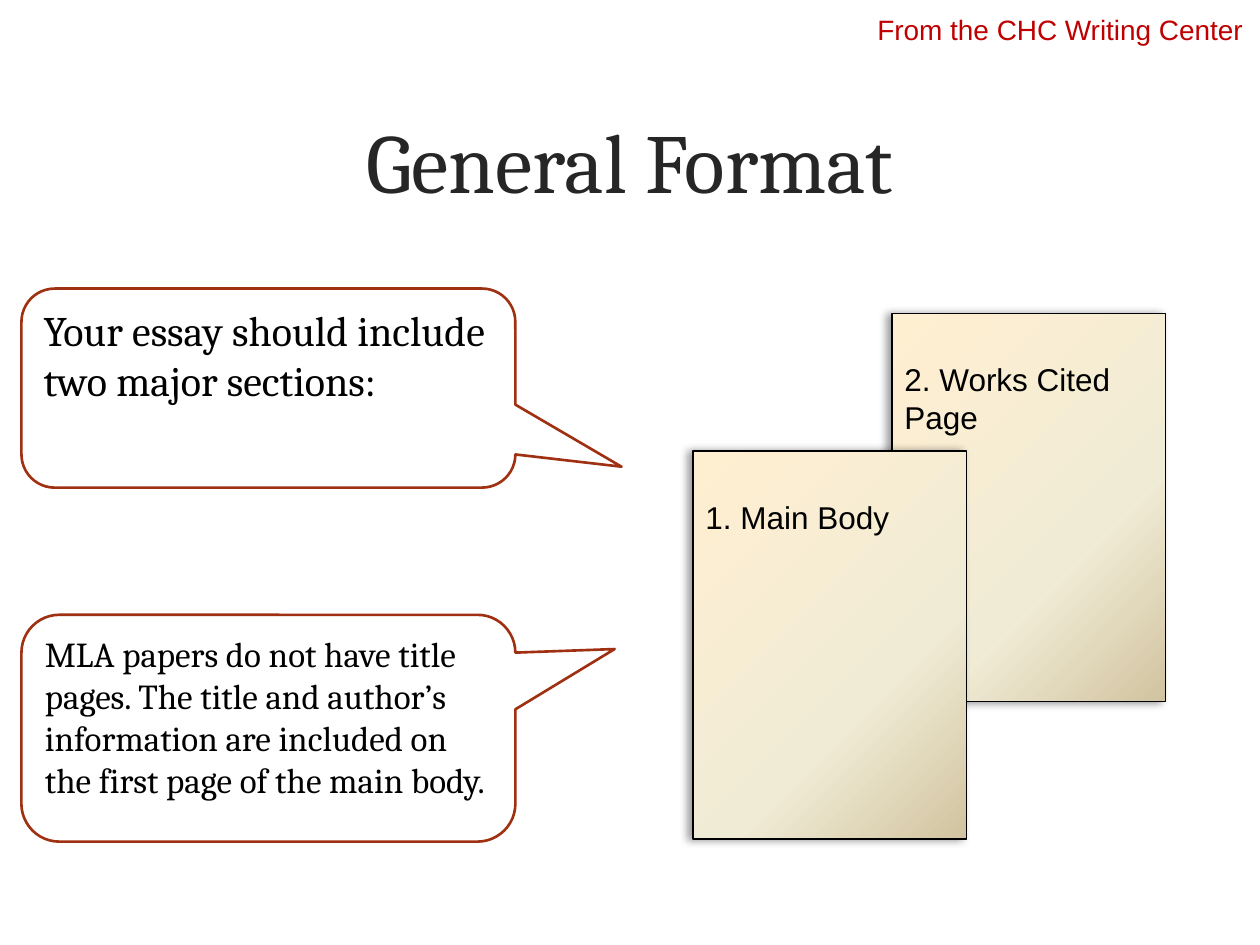
from lxml import etree
from pptx import Presentation
from pptx.dml.color import RGBColor
from pptx.enum.shapes import MSO_SHAPE
from pptx.enum.text import MSO_ANCHOR, PP_ALIGN
from pptx.oxml.ns import qn
from pptx.util import Inches, Pt

CALLOUT = MSO_SHAPE.ROUNDED_RECTANGULAR_CALLOUT
RECTANGLE = MSO_SHAPE.RECTANGLE
TOP, MIDDLE = MSO_ANCHOR.TOP, MSO_ANCHOR.MIDDLE
LEFT, CENTER = PP_ALIGN.LEFT, PP_ALIGN.CENTER

SLIDE_W, SLIDE_H = 10, 7.5
TITLE = "General Format"
SOURCE_NOTE = "From the CHC Writing Center"

# text, text size, top, height, callout tip as shares of the box size
CALLOUTS = [
    ("Your essay should include two major sections:", 24, 2.29, 1.58, (0.715, 0.395)),
    ("MLA papers do not have title pages. The title and author’s information "
     "are included on the first page of the main body.", 20, 4.88, 1.8, (0.701, -0.349)),
]
CALLOUT_LEFT, CALLOUT_W, CORNER = 0.17, 3.92, 0.167

# back sheet first; each later sheet is stepped down and to the left
SHEETS = ["2. Works Cited Page", "1. Main Body"]
SHEET_LEFT, SHEET_TOP, SHEET_W, SHEET_H = 7.08, 2.49, 2.17, 3.08
STEP_X, STEP_Y = -1.58, 1.09
SHEET_TEXT_TOP = 0.37
PAPER_STOPS = [(0, "FFEFD1"), (65, "F0EBD5"), (100, "D1C39F")]

BLACK, WHITE, RUST, RED, CHARCOAL = "000000", "FFFFFF", "9F3011", "C00000", "262626"


def color(value):
    return RGBColor.from_string(value)


def write(shape, text, size, font, ink, align=LEFT, anchor=TOP):
    frame = shape.text_frame
    frame.word_wrap = True
    frame.vertical_anchor = anchor
    para = frame.paragraphs[0]
    para.alignment = align
    span = para.add_run()
    span.text = text
    span.font.size = Pt(size)
    span.font.name = font
    span.font.color.rgb = color(ink)


def add_outlined(page, kind, bounds, line_color, line_width):
    shape = page.shapes.add_shape(kind, *map(Inches, bounds))
    shape.shadow.inherit = False
    shape.line.color.rgb = color(line_color)
    shape.line.width = Pt(line_width)
    return shape


def add_color_xml(parent, value):
    return etree.SubElement(parent, qn("a:srgbClr"), val=value)


def fill_paper(shape):
    """Three-stop diagonal gradient, which needs its stop list rewritten."""
    shape.fill.gradient()
    shape.fill.gradient_angle = 315
    stops = shape.element.spPr.find(f"{qn('a:gradFill')}/{qn('a:gsLst')}")
    for stop in list(stops):
        stops.remove(stop)
    for percent, value in PAPER_STOPS:
        stop = etree.SubElement(stops, qn("a:gs"), pos=str(percent * 1000))
        add_color_xml(stop, value)


def cast_shadow(shape):
    """Soft shadow falling to the left of the sheet."""
    effects = shape.element.spPr.find(qn("a:effectLst"))
    shadow = etree.SubElement(effects, qn("a:outerShdw"), blurRad=str(Pt(5)),
                              dist=str(Pt(3)), dir=str(180 * 60000), rotWithShape="0")
    etree.SubElement(add_color_xml(shadow, BLACK), qn("a:alpha"), val="40000")


def add_sheet(page, index, text):
    bounds = (SHEET_LEFT + index * STEP_X, SHEET_TOP + index * STEP_Y, SHEET_W, SHEET_H)
    sheet = add_outlined(page, RECTANGLE, bounds, BLACK, 0.75)
    fill_paper(sheet)
    cast_shadow(sheet)
    sheet.text_frame.margin_top = Inches(SHEET_TEXT_TOP)
    write(sheet, text, 18, "Arial", BLACK)


def add_callout(page, text, size, top, height, tip):
    bounds = (CALLOUT_LEFT, top, CALLOUT_W, height)
    callout = add_outlined(page, CALLOUT, bounds, RUST, 1.5)
    callout.fill.solid()
    callout.fill.fore_color.rgb = color(WHITE)
    for index, value in enumerate((*tip, CORNER)):
        callout.adjustments[index] = value
    write(callout, text, size, "Cambria", BLACK)


def main():
    deck = Presentation()
    deck.slide_width, deck.slide_height = Inches(SLIDE_W), Inches(SLIDE_H)
    page = deck.slides.add_slide(deck.slide_layouts.get_by_name("Title Only"))

    title = page.shapes.title
    title.left, title.top = Inches(0.6), Inches(0.48)
    title.width, title.height = Inches(8.8), Inches(1.58)
    write(title, TITLE, 48, "Cambria", CHARCOAL, CENTER, MIDDLE)

    for index, text in enumerate(SHEETS):
        add_sheet(page, index, text)
    for callout in CALLOUTS:
        add_callout(page, *callout)

    note = page.shapes.add_textbox(*map(Inches, (6.83, 0.03, 3.17, 0.4)))
    write(note, SOURCE_NOTE, 16, "Arial", RED, CENTER, MIDDLE)

    deck.save("out.pptx")


if __name__ == "__main__":
    main()
